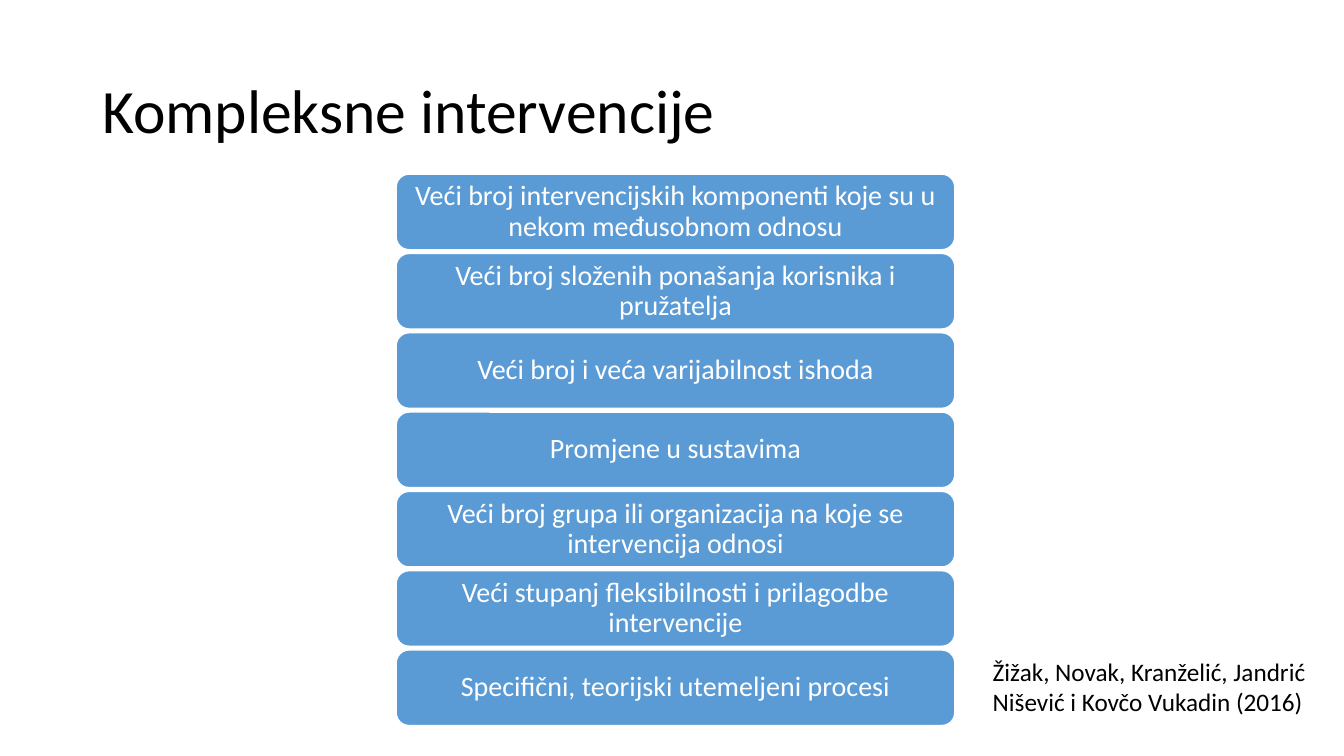
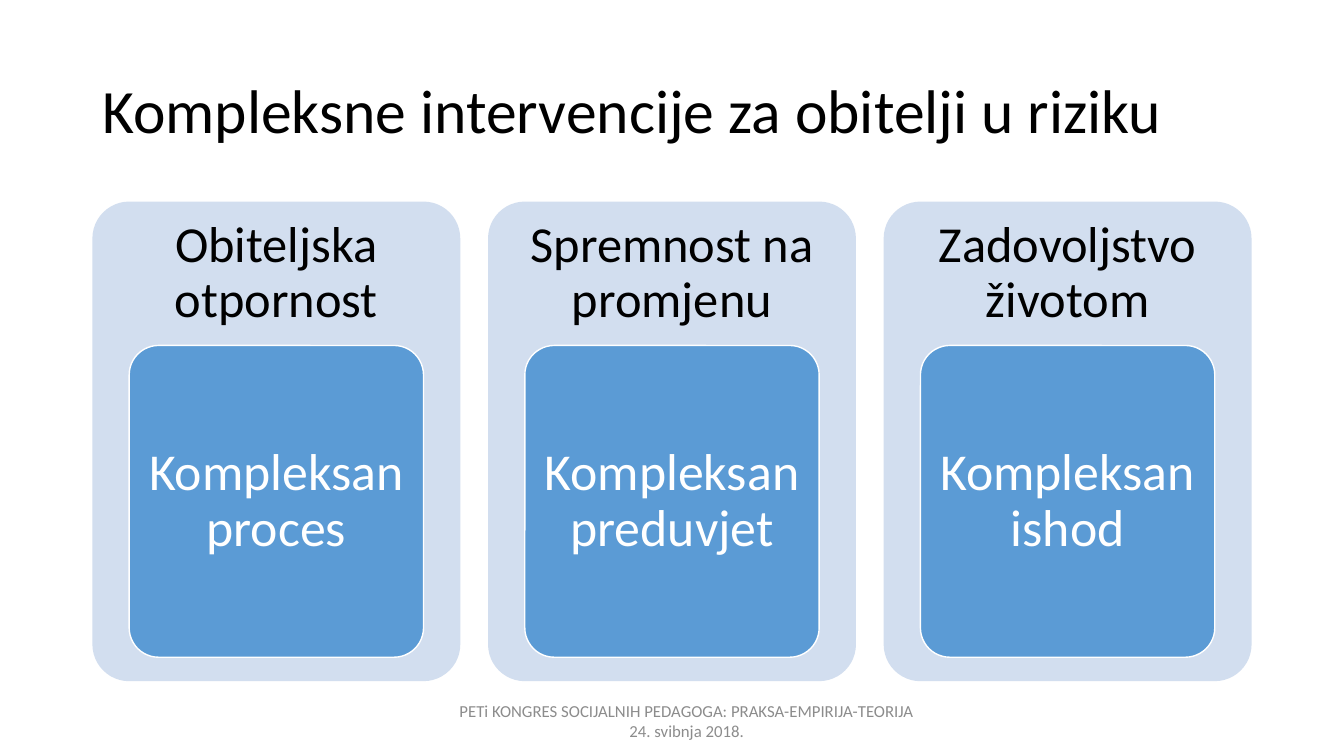
from pptx import Presentation
from pptx.dml.color import RGBColor
from pptx.enum.shapes import MSO_SHAPE as Shape
from pptx.enum.text import MSO_ANCHOR as Anchor, PP_ALIGN as Align
from pptx.util import Pt

FONT = "Calibri"
COLORS = {
    "black": "000000",
    "white": "FFFFFF",
    "blue": "5B9BD5",
    "pale": "D2DEEF",
    "gray": "8C8C8C",
}

FEATURES = [
    "Veći broj intervencijskih komponenti koje su u nekom međusobnom odnosu",
    "Veći broj složenih ponašanja korisnika i pružatelja",
    "Veći broj i veća varijabilnost ishoda",
    "Promjene u sustavima",
    "Veći broj grupa ili organizacija na koje se intervencija odnosi",
    "Veći stupanj fleksibilnosti i prilagodbe intervencije",
    "Specifični, teorijski utemeljeni procesi",
]
CARDS = [
    ("Obiteljska otpornost", "Kompleksan proces"),
    ("Spremnost na promjenu", "Kompleksan preduvjet"),
    ("Zadovoljstvo životom", "Kompleksan ishod"),
]


def color(name):
    return RGBColor.from_string(COLORS[name])


def write(shape, text, size, ink="black", align=Align.LEFT, anchor=Anchor.MIDDLE,
          spacing=1.0, margins=(7.2, 3.6)):
    """Fill a shape with one formatted paragraph; margins are (sides, top and bottom)."""
    frame = shape.text_frame
    frame.word_wrap = True
    frame.vertical_anchor = anchor
    frame.margin_left = frame.margin_right = Pt(margins[0])
    frame.margin_top = frame.margin_bottom = Pt(margins[1])
    paragraph = frame.paragraphs[0]
    paragraph.alignment = align
    paragraph.line_spacing = spacing
    run = paragraph.add_run()
    run.text = text
    run.font.name = FONT
    run.font.size = Pt(size)
    run.font.color.rgb = color(ink)


def add_text(slide, box, text, size, **text_format):
    write(slide.shapes.add_textbox(*map(Pt, box)), text, size, **text_format)


def add_rounded(slide, box, fill, rounding, line=None):
    shape = slide.shapes.add_shape(Shape.ROUNDED_RECTANGLE, *map(Pt, box))
    shape.adjustments[0] = rounding
    shape.shadow.inherit = False
    shape.fill.solid()
    shape.fill.fore_color.rgb = color(fill)
    if line:
        shape.line.color.rgb = color(line)
        shape.line.width = Pt(1)
    else:
        shape.line.fill.background()
    return shape


def add_titled_slide(presentation, title):
    slide = presentation.slides.add_slide(presentation.slide_layouts[6])
    add_text(slide, (66, 28.75, 828, 104.4), title, 44, spacing=0.9)
    return slide


def add_bars(slide, labels):
    left, top, width, height, gap = 283, 124.4, 399, 53.95, 2.7
    for index, label in enumerate(labels):
        box = (left, top + index * (height + gap), width, height)
        bar = add_rounded(slide, box, "blue", 0.17, line="white")
        write(bar, label, 20, ink="white", align=Align.CENTER, spacing=0.9,
              margins=(6, 3))


def add_cards(slide, cards):
    left, top, width, height, gap = 66, 144, 262.8, 342.6, 19.8
    heading_height = height * 0.3
    inner_width, inner_height = width * 0.8, height * 0.65
    for index, (heading, label) in enumerate(cards):
        x = left + index * (width + gap)
        add_rounded(slide, (x, top, width, height), "pale", 0.1)
        add_text(slide, (x, top, width, heading_height), heading, 36,
                 align=Align.CENTER, spacing=0.9, margins=(10.8, 10.8))
        inner_box = (x + (width - inner_width) / 2, top + heading_height,
                     inner_width, inner_height)
        inner = add_rounded(slide, inner_box, "blue", 0.1, line="white")
        write(inner, label, 37, ink="white", align=Align.CENTER, spacing=0.9,
              margins=(7, 5.5))


def main():
    presentation = Presentation()
    presentation.slide_width, presentation.slide_height = Pt(960), Pt(540)

    # Features of complex interventions
    slide = add_titled_slide(presentation, "Kompleksne intervencije")
    add_bars(slide, FEATURES)
    add_text(slide, (702, 465, 249, 51),
             "Žižak, Novak, Kranželić, Jandrić Nišević i Kovčo Vukadin (2016)",
             18, anchor=Anchor.TOP)

    # Interventions for families at risk
    slide = add_titled_slide(presentation, "Kompleksne intervencije za obitelji u riziku")
    add_cards(slide, CARDS)
    add_text(slide, (318, 501, 345, 28),
             "PETi KONGRES SOCIJALNIH PEDAGOGA: PRAKSA-EMPIRIJA-TEORIJA 24. svibnja 2018.",
             12, ink="gray", align=Align.CENTER)

    presentation.save("out.pptx")


if __name__ == "__main__":
    main()
